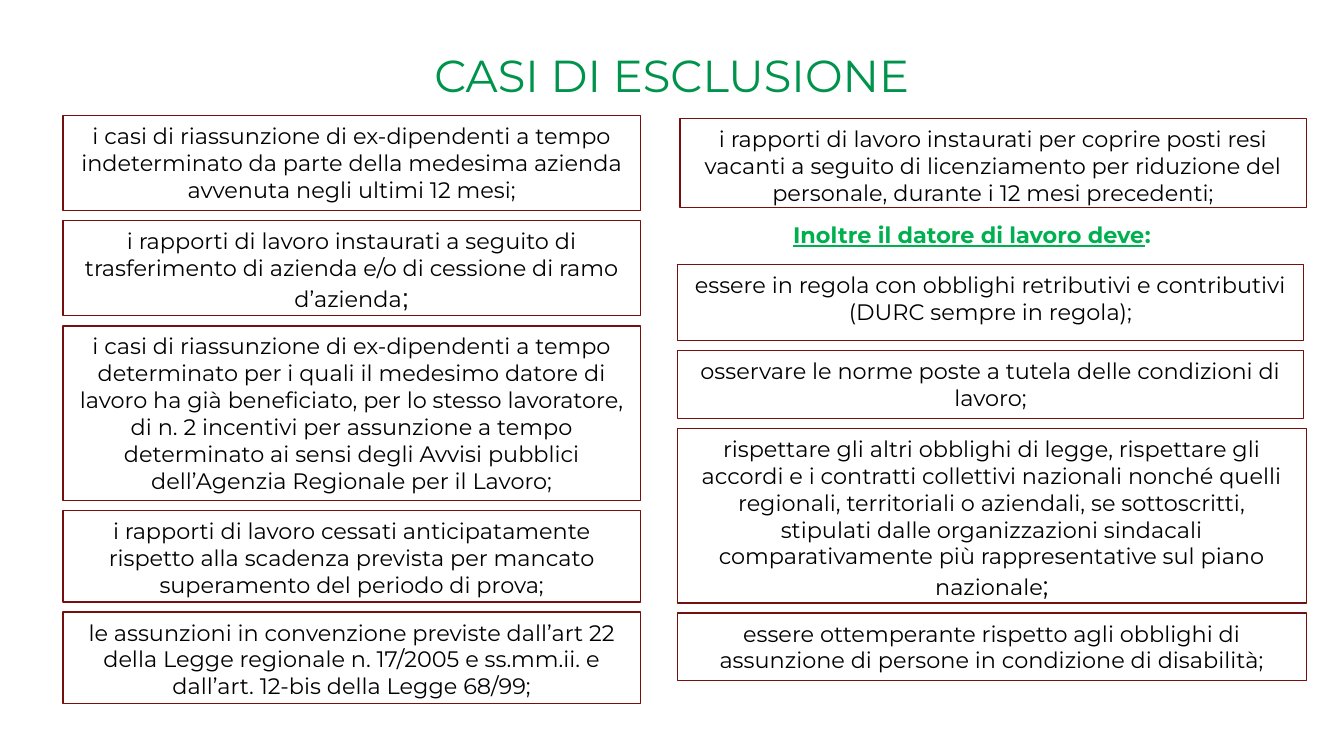
import pptx
import pptx.dml.color
import pptx.enum.shapes
import pptx.enum.text
import pptx.oxml.ns
import pptx.util
from lxml import etree

Cm = pptx.util.Cm
Pt = pptx.util.Pt
ALIGN = pptx.enum.text.PP_ALIGN
ANCHOR = pptx.enum.text.MSO_ANCHOR

# Content: each column has left, top and its cases (width, height, text, closing font)
COLORS = {"title": "00934C", "heading": "00B050", "border": "75100F",
          "fill": "FFFFFF", "text": "000000"}
FONT = "Montserrat"
GAP = 0.19
TITLE = "CASI DI ESCLUSIONE"
HEADING = "Inoltre il datore di lavoro deve"
COLUMNS = [
    (1.19, 2.18, [
        (10.92, 1.8, "i casi di riassunzione di ex-dipendenti a tempo indeterminato da parte "
         "della medesima azienda avvenuta negli ultimi 12 mesi;", None),
        (10.92, 1.8, "i rapporti di lavoro instaurati a seguito di trasferimento di azienda "
         "e/o di cessione di ramo d’azienda", "Arial"),
        (10.92, 3.3, "i casi di riassunzione di ex-dipendenti a tempo determinato per i quali "
         "il medesimo datore di lavoro ha già beneficiato, per lo stesso lavoratore, di n. 2 "
         "incentivi per assunzione a tempo determinato ai sensi degli Avvisi pubblici "
         "dell’Agenzia Regionale per il Lavoro;", None),
        (10.92, 1.73, "i rapporti di lavoro cessati anticipatamente rispetto alla scadenza "
         "prevista per mancato superamento del periodo di prova;", None),
        (10.92, 1.73, "le assunzioni in convenzione previste dall’art 22 della Legge regionale "
         "n. 17/2005 e ss.mm.ii. e dall’art. 12-bis della Legge 68/99;", None),
    ]),
    (12.85, 2.24, [
        (11.84, 1.68, "i rapporti di lavoro instaurati per coprire posti resi vacanti a seguito "
         "di licenziamento per riduzione del personale, durante i 12 mesi precedenti;", None),
    ]),
    (12.8, 5.0, [
        (11.84, 1.44, "essere in regola con obblighi retributivi e contributivi "
         "(DURC sempre in regola);", None),
        (11.84, 1.28, "osservare le norme poste a tutela delle condizioni di lavoro;", None),
        (11.89, 3.3, "rispettare gli altri obblighi di legge, rispettare gli accordi e i "
         "contratti collettivi nazionali nonché quelli regionali, territoriali o aziendali, se "
         "sottoscritti, stipulati dalle organizzazioni sindacali comparativamente più "
         "rappresentative sul piano nazionale", FONT),
        (11.89, 1.27, "essere ottemperante rispetto agli obblighi di assunzione di persone in "
         "condizione di disabilità;", None),
    ]),
]


def rgb(name):
    return pptx.dml.color.RGBColor.from_string(COLORS[name])


def add_span(para, text, color, size=12, font=FONT, bold=False, underline=False):
    span = para.add_run()
    span.text = text
    span.font.name = font
    span.font.size = Pt(size)
    span.font.bold = bold
    span.font.underline = underline
    span.font.color.rgb = rgb(color)


def add_text_box(page, left, top, width, height):
    box = page.shapes.add_textbox(Cm(left), Cm(top), Cm(width), Cm(height))
    box.text_frame.word_wrap = True
    return box.text_frame


def add_case(page, left, top, width, height, text, closing_font):
    box = page.shapes.add_shape(pptx.enum.shapes.MSO_SHAPE.RECTANGLE,
                                Cm(left), Cm(top), Cm(width), Cm(height))
    box.shadow.inherit = False
    box.fill.solid()
    box.fill.fore_color.rgb = rgb("fill")
    # Translucent fill
    fill_color = box.fill._xPr.find(".//" + pptx.oxml.ns.qn("a:srgbClr"))
    etree.SubElement(fill_color, pptx.oxml.ns.qn("a:alpha"), val="40000")
    box.line.color.rgb = rgb("border")
    box.line.width = Pt(0.75)
    frame = box.text_frame
    frame.word_wrap = True
    frame.vertical_anchor = ANCHOR.TOP
    para = frame.paragraphs[0]
    para.alignment = ALIGN.CENTER
    add_span(para, text, "text")
    if closing_font:
        add_span(para, ";", "text", size=14, font=closing_font)


deck = pptx.Presentation()
deck.slide_width, deck.slide_height = Cm(25.4), Cm(14.29)
page = deck.slides.add_slide(deck.slide_layouts[6])

# Title
frame = add_text_box(page, 0.86, 0.61, 23.67, 1.6)
frame.vertical_anchor = ANCHOR.MIDDLE
para = frame.paragraphs[0]
para.alignment = ALIGN.CENTER
add_span(para, TITLE, "title", size=24)

# Columns of cases
for left, top, cases in COLUMNS:
    for width, height, text, closing_font in cases:
        add_case(page, left, top, width, height, text, closing_font)
        top += height + GAP

# Heading of the employer's duties
frame = add_text_box(page, 12.7, 4.06, 11.81, 0.77)
frame.margin_left = Cm(2.29)
para = frame.paragraphs[0]
add_span(para, HEADING, "heading", bold=True, underline=True)
add_span(para, ":", "heading", bold=True)

deck.save("out.pptx")
